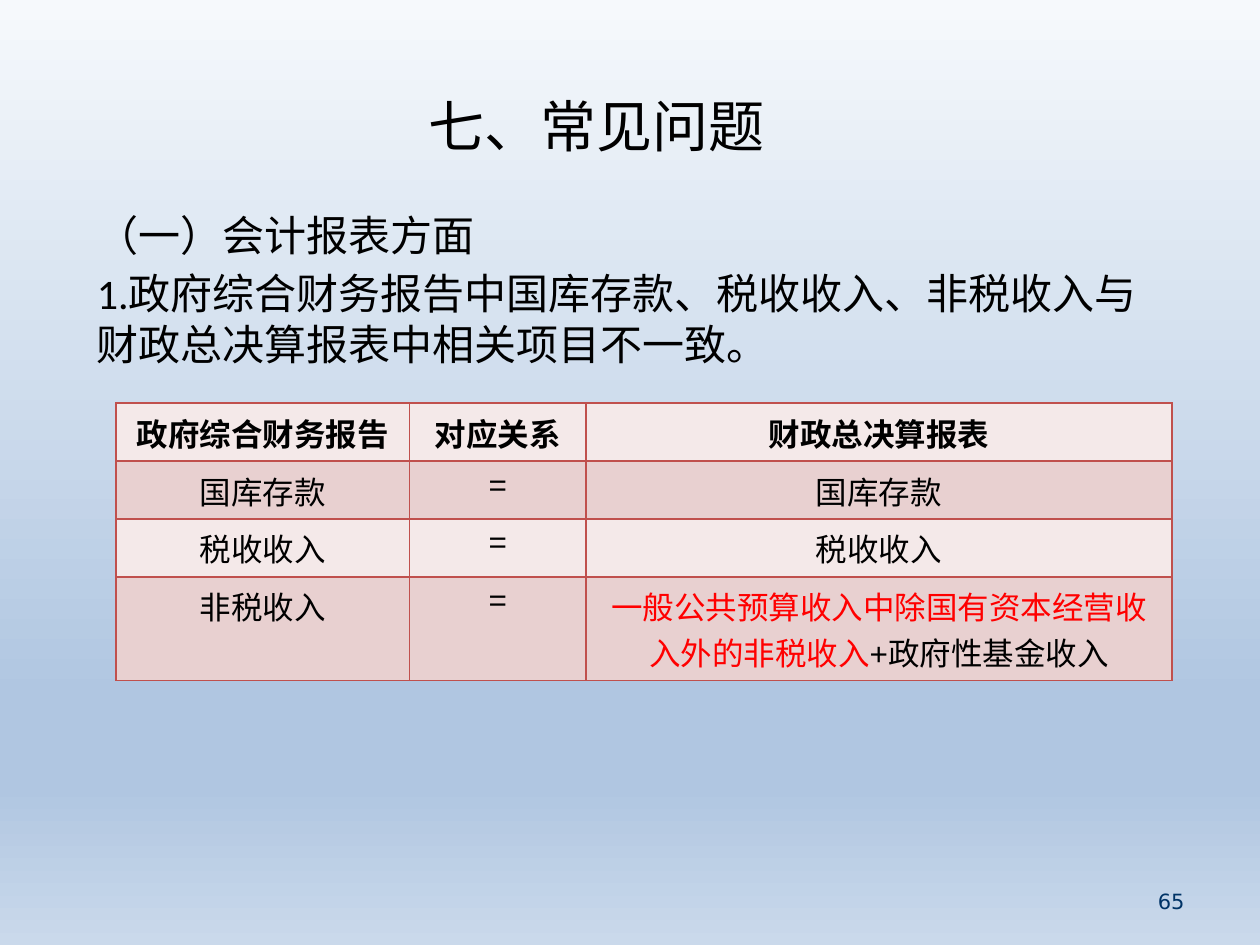
from lxml.etree import SubElement
from pptx import Presentation
from pptx.dml.color import RGBColor
from pptx.enum.text import MSO_ANCHOR as Anchor, PP_ALIGN as Align
from pptx.oxml.ns import qn
from pptx.util import Inches, Pt

# Content
TITLE = "七、常见问题"
BODY = [
    "（一）会计报表方面",
    "1.政府综合财务报告中国库存款、税收收入、非税收入与财政总决算报表中相关项目不一致。",
]
PAGE_NUMBER = "65"
BLACK, RED, NAVY, BORDER = "000000", "FF0000", "003366", "C0504D"
# A cell is a list of (text, colour) runs
ROWS = [[[(text, BLACK)] for text in row] for row in (
    ("政府综合财务报告", "对应关系", "财政总决算报表"),
    ("国库存款", "=", "国库存款"),
    ("税收收入", "=", "税收收入"),
)]
ROWS.append([
    [("非税收入", BLACK)],
    [("=", BLACK)],
    [("一般公共预算收入中除国有资本经营收入外的非税收入", RED), ("+政府性基金收入", BLACK)],
])
COLUMN_WIDTHS = [2.33, 1.4, 4.65]
ROW_HEIGHTS = [0.46, 0.46, 0.46, 0.82]
ROW_FILLS = ["F4E9E9", "E8D0D0"]
BACKGROUND_STOPS = [(0, "F6F9FC"), (74, "B0C6E1"), (83, "B0C6E1"), (100, "CAD9EB")]


def colour(value):
    return RGBColor.from_string(value)


def add_run(paragraph, text, value, **font):
    run = paragraph.add_run()
    run.text = text
    run.font.color.rgb = colour(value)
    for name, setting in font.items():
        setattr(run.font, name, setting)


def place(shape, left, top, width, height):
    box = {"left": left, "top": top, "width": width, "height": height}
    for name, length in box.items():
        setattr(shape, name, Inches(length))


def add_text_box(slide, *box):
    shape = slide.shapes.add_textbox(0, 0, 0, 0)
    place(shape, *box)
    shape.text_frame.word_wrap = True
    return shape.text_frame


def add_borders(cell):
    properties = cell._tc.get_or_add_tcPr()
    for index, side in enumerate(("lnL", "lnR", "lnT", "lnB")):
        line = properties.makeelement(qn(f"a:{side}"), {"w": str(Pt(1))})
        SubElement(SubElement(line, qn("a:solidFill")), qn("a:srgbClr"), val=BORDER)
        properties.insert(index, line)


presentation = Presentation()
presentation.slide_width, presentation.slide_height = Inches(10), Inches(7.5)
slide = presentation.slides.add_slide(presentation.slide_layouts[5])

# Background gradient, running downwards
background = slide.background.fill
background.gradient()
background.gradient_angle = 270
stop_list = slide.element.xpath(".//a:gsLst")[0]
for stop in list(stop_list):
    stop_list.remove(stop)
for position, value in BACKGROUND_STOPS:
    stop = SubElement(stop_list, qn("a:gs"), pos=str(position * 1000))
    SubElement(stop, qn("a:srgbClr"), val=value)

# Title
title = slide.shapes.title
place(title, 0.72, 0.54, 8.03, 0.91)
title.text_frame.vertical_anchor = Anchor.MIDDLE
heading = title.text_frame.paragraphs[0]
heading.alignment = Align.CENTER
add_run(heading, TITLE, BLACK, size=Pt(32), name="Arial")

# Body text
body = add_text_box(slide, 0.67, 1.61, 8.59, 1.5)
for index, text in enumerate(BODY):
    paragraph = body.add_paragraph() if index else body.paragraphs[0]
    paragraph.space_before = Pt(4.8)
    add_run(paragraph, text, BLACK, size=Pt(24), name="Calibri")

# Table
table = slide.shapes.add_table(
    len(ROWS), len(COLUMN_WIDTHS), Inches(0.92), Inches(3.2),
    Inches(sum(COLUMN_WIDTHS)), Inches(sum(ROW_HEIGHTS))).table
for column, width in zip(table.columns, COLUMN_WIDTHS):
    column.width = Inches(width)
for row_index, (row, height) in enumerate(zip(ROWS, ROW_HEIGHTS)):
    table.rows[row_index].height = Inches(height)
    for column_index, runs in enumerate(row):
        cell = table.cell(row_index, column_index)
        cell.fill.solid()
        cell.fill.fore_color.rgb = colour(ROW_FILLS[row_index % 2])
        add_borders(cell)
        paragraph = cell.text_frame.paragraphs[0]
        paragraph.alignment = Align.CENTER
        for text, value in runs:
            add_run(paragraph, text, value, size=Pt(18), name="Arial", bold=row_index == 0)

# Page number
footer = add_text_box(slide, 7.17, 6.95, 2.33, 0.4)
footer.vertical_anchor = Anchor.MIDDLE
footer.paragraphs[0].alignment = Align.RIGHT
add_run(footer.paragraphs[0], PAGE_NUMBER, NAVY, size=Pt(12), name="DejaVu Sans")

presentation.save("out.pptx")
